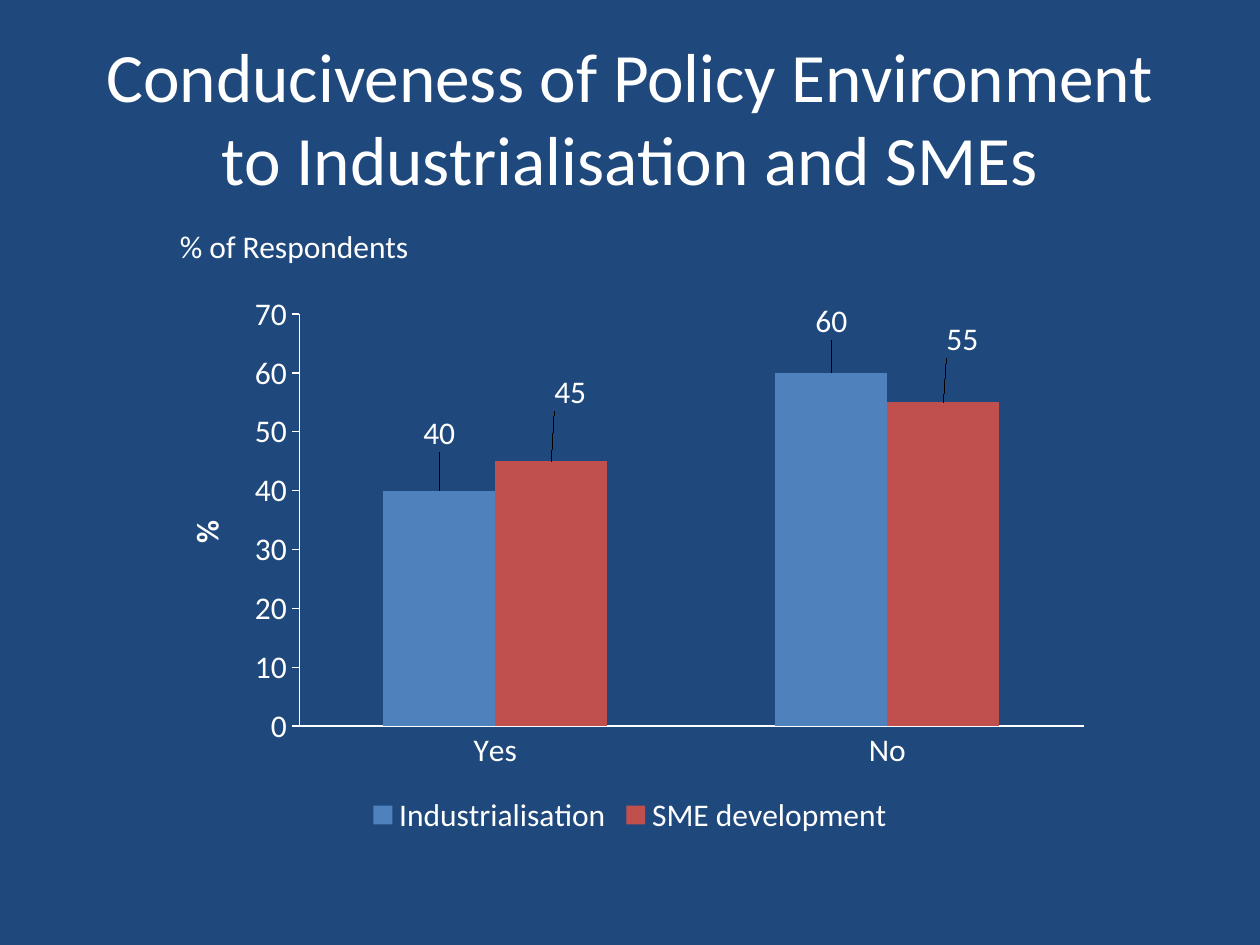
from dataclasses import dataclass

from lxml.etree import SubElement
from pptx import Presentation
from pptx.chart.data import CategoryChartData
from pptx.dml.color import RGBColor
from pptx.enum.chart import XL_CHART_TYPE as ChartType
from pptx.enum.chart import XL_LABEL_POSITION as LabelPos
from pptx.enum.chart import XL_LEGEND_POSITION as LegendPos
from pptx.enum.chart import XL_TICK_MARK as Tick
from pptx.enum.text import MSO_ANCHOR as Anchor
from pptx.enum.text import PP_ALIGN as Align
from pptx.oxml.ns import qn
from pptx.util import Inches, Pt


@dataclass(frozen=True)
class Theme:
    font: str = "Calibri"
    background: str = "1F497D"
    text: str = "FFFFFF"
    series: tuple = ("4F81BD", "C0504D")
    title_size: float = 39.6
    body_size: float = 18


def rgb(value):
    return RGBColor.from_string(value)


def style_font(font, theme, size, bold=False):
    font.name = theme.font
    font.size = Pt(size)
    font.bold = bold
    font.color.rgb = rgb(theme.text)


def write(tf, text, *, theme, size, align=Align.CENTER, bold=False):
    p = tf.paragraphs[0]
    p.alignment = align
    r = p.add_run()
    r.text = text
    style_font(r.font, theme, size, bold)


def manual_layout(parent, index, **values):
    for old in parent.findall(qn("c:layout")):
        parent.remove(old)
    layout = SubElement(parent, qn("c:layout"))
    parent.insert(index, layout)
    manual = SubElement(layout, qn("c:manualLayout"))
    for name, value in values.items():
        SubElement(manual, qn(f"c:{name}")).set("val", str(value))


class SlideBuilder:
    def __init__(self, prs, theme):
        self.theme = theme
        self.s = prs.slides.add_slide(prs.slide_layouts[5])
        fill = self.s.background.fill
        fill.solid()
        fill.fore_color.rgb = rgb(theme.background)

    def title(self, text, x, y, w, h):
        sp = self.s.shapes.title
        sp.left, sp.top, sp.width, sp.height = map(Inches, (x, y, w, h))
        tf = sp.text_frame
        tf.word_wrap = True
        tf.vertical_anchor = Anchor.MIDDLE
        write(tf, text, theme=self.theme, size=self.theme.title_size)

    def text(self, text, x, y, w, h):
        tf = self.s.shapes.add_textbox(*map(Inches, (x, y, w, h))).text_frame
        tf.word_wrap = True
        write(tf, text, theme=self.theme, size=self.theme.body_size)

    def column_chart(self, cats, series, label_shifts, axis_title, x, y, w, h):
        data = CategoryChartData()
        data.categories = cats
        for name, values in series.items():
            data.add_series(name, values)
        chart = self.s.shapes.add_chart(
            ChartType.COLUMN_CLUSTERED, *map(Inches, (x, y, w, h)), data
        ).chart
        style_font(chart.font, self.theme, self.theme.body_size)
        chart.has_title = False
        chart.has_legend = True
        chart.legend.position = LegendPos.BOTTOM
        chart.legend.include_in_layout = False
        self.axes(chart, axis_title)
        plot = chart.plots[0]
        plot.gap_width = 150
        plot.overlap = 0
        plot.vary_by_categories = False
        for ser, color, shifts in zip(plot.series, self.theme.series, label_shifts):
            ser.format.fill.solid()
            ser.format.fill.fore_color.rgb = rgb(color)
            self.labels(ser, shifts)
        plot_area = chart.element.find(f".//{qn('c:plotArea')}")
        manual_layout(plot_area, 0, layoutTarget="inner", xMode="edge",
                      yMode="edge", x=0.15, y=0.055, w=0.83, h=0.74)

    def axes(self, chart, axis_title):
        cat, val = chart.category_axis, chart.value_axis
        val.minimum_scale, val.maximum_scale, val.major_unit = 0, 70, 10
        val.has_major_gridlines = False
        cat.major_tick_mark = Tick.NONE
        val.major_tick_mark = Tick.OUTSIDE
        for axis in (cat, val):
            axis.format.line.color.rgb = rgb(self.theme.text)
            axis.format.line.width = Pt(0.75)
            style_font(axis.tick_labels.font, self.theme, self.theme.body_size)
        val.has_title = True
        write(val.axis_title.text_frame, axis_title, theme=self.theme,
              size=self.theme.body_size, bold=True)

    def labels(self, ser, shifts):
        labels = ser.data_labels
        labels.show_value = True
        labels.position = LabelPos.OUTSIDE_END
        style_font(labels.font, self.theme, self.theme.body_size)
        for i in range(len(shifts)):
            label = ser.points[i].data_label
            label.position = LabelPos.OUTSIDE_END
            style_font(label.font, self.theme, self.theme.body_size)
        items = labels._element.findall(qn("c:dLbl"))
        for item, (dx, dy) in zip(items, shifts):
            manual_layout(item, 1, x=dx, y=dy)


def main():
    prs = Presentation()
    prs.slide_width, prs.slide_height = Inches(10), Inches(7.5)
    slide = SlideBuilder(prs, Theme())
    slide.title("Conduciveness of Policy Environment to Industrialisation and SMEs",
                0.5, 0.3, 9, 1.25)
    slide.text("% of Respondents", 0, 1.75, 4.67, 0.4)
    slide.column_chart(
        ["Yes", "No"],
        {"Industrialisation": (40, 60), "SME development": (45, 55)},
        [[(0, -0.06), (0, -0.05)], [(0.02, -0.08), (0.02, -0.07)]],
        "%", 1.25, 2.25, 7.5, 4.42,
    )
    prs.save("out.pptx")


if __name__ == "__main__":
    main()
